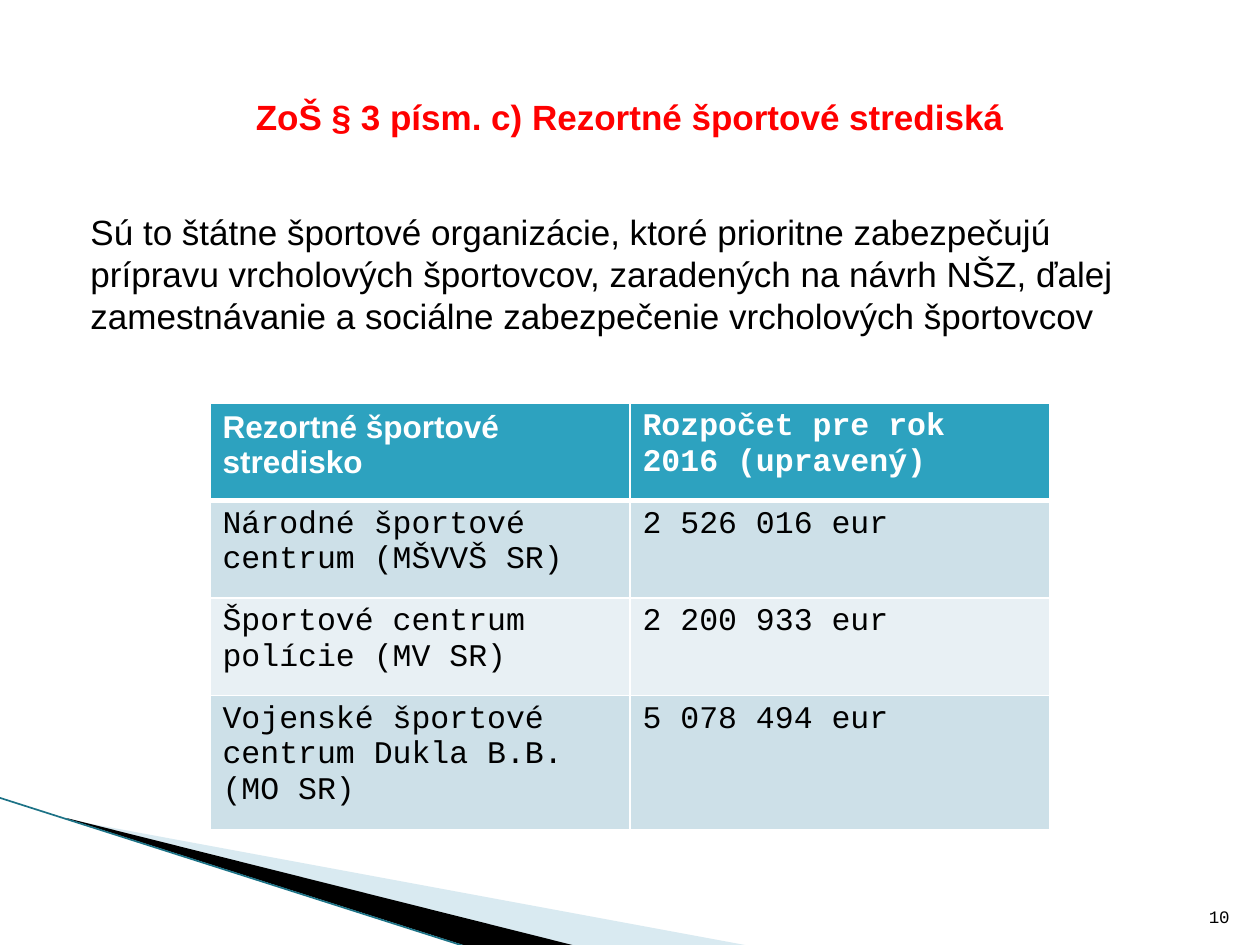
from pptx import Presentation
from pptx.dml.color import RGBColor
from pptx.enum.shapes import MSO_CONNECTOR
from pptx.enum.text import MSO_ANCHOR, PP_ALIGN
from pptx.oxml.ns import qn
from pptx.util import Pt
from lxml.etree import SubElement

WHITE = RGBColor(0xFF, 0xFF, 0xFF)
BLACK = RGBColor(0x00, 0x00, 0x00)
RED = RGBColor(0xFF, 0x00, 0x00)
HEADER_TEAL = RGBColor(0x2D, 0xA2, 0xBF)
BAND_DARK = RGBColor(0xCD, 0xE0, 0xE8)
BAND_LIGHT = RGBColor(0xE8, 0xF0, 0xF4)
WEDGE_BLUE = RGBColor(0xA0, 0xCB, 0xDC)
EDGE_TEAL = RGBColor(0x1C, 0x72, 0x86)

SANS = "Arial"
MONO = "Courier New"

ROW_HEIGHTS = (55.7, 55.7, 55.7, 76.5)
COLUMN_WIDTH = 240
TABLE_ROWS = (
    ("Rezortné športové stredisko", "Rozpočet pre rok 2016 (upravený)"),
    ("Národné športové centrum (MŠVVŠ SR)", "2 526 016 eur"),
    ("Športové centrum polície (MV SR)", "2 200 933 eur"),
    ("Vojenské športové centrum Dukla B.B.\n(MO SR)", "5 078 494 eur"),
)


def add_run(paragraph, text, font_name, size, color, bold=False):
    run = paragraph.add_run()
    run.text = text
    run.font.name = font_name
    run.font.size = Pt(size)
    run.font.bold = bold
    run.font.color.rgb = color


def add_text(slide, box, text, font_name, size, color, bold=False,
             align=PP_ALIGN.LEFT, anchor=MSO_ANCHOR.TOP, indent=0):
    shape = slide.shapes.add_textbox(*map(Pt, box))
    frame = shape.text_frame
    frame.word_wrap = True
    frame.vertical_anchor = anchor
    paragraph = frame.paragraphs[0]
    paragraph.alignment = align
    if indent:
        paragraph._p.get_or_add_pPr().set("marL", str(Pt(indent)))
    add_run(paragraph, text, font_name, size, color, bold)


def add_wedge(slide, points, color, opacity=100):
    start, *others = [(Pt(x), Pt(y)) for x, y in points]
    builder = slide.shapes.build_freeform(*start)
    builder.add_line_segments(others, close=True)
    shape = builder.convert_to_shape()
    shape.shadow.inherit = False
    shape.line.fill.background()
    shape.fill.solid()
    shape.fill.fore_color.rgb = color
    if opacity < 100:
        color_element = shape._element.spPr.find(".//" + qn("a:srgbClr"))
        SubElement(color_element, qn("a:alpha"), val=str(opacity * 1000))


def add_edge_line(slide, start, end, color, width):
    line = slide.shapes.add_connector(
        MSO_CONNECTOR.STRAIGHT, *map(Pt, start + end))
    line.line.color.rgb = color
    line.line.width = Pt(width)
    SubElement(line._element.spPr, qn("a:effectLst"))


def set_borders(cell, bottom_width):
    """Draw white cell borders; they must precede the fill in tcPr."""
    properties = cell._tc.get_or_add_tcPr()
    for side, width in (("L", 1), ("R", 1), ("T", 1), ("B", bottom_width)):
        border = SubElement(properties, qn(f"a:ln{side}"), w=str(Pt(width)))
        fill = SubElement(border, qn("a:solidFill"))
        SubElement(fill, qn("a:srgbClr"), val=str(WHITE))


def fill_cell(cell, text, font_name, is_header, color):
    set_borders(cell, 3 if is_header else 1)
    cell.fill.solid()
    cell.fill.fore_color.rgb = color
    frame = cell.text_frame
    for index, line in enumerate(text.split("\n")):
        paragraph = frame.add_paragraph() if index else frame.paragraphs[0]
        add_run(paragraph, line, font_name, 18,
                WHITE if is_header else BLACK, is_header)


def add_budget_table(slide, left, top):
    table = slide.shapes.add_table(
        len(TABLE_ROWS), 2, Pt(left), Pt(top),
        Pt(2 * COLUMN_WIDTH), Pt(sum(ROW_HEIGHTS))).table
    for column in table.columns:
        column.width = Pt(COLUMN_WIDTH)
    for row_index, texts in enumerate(TABLE_ROWS):
        table.rows[row_index].height = Pt(ROW_HEIGHTS[row_index])
        is_header = row_index == 0
        band = BAND_DARK if row_index % 2 else BAND_LIGHT
        for column_index, text in enumerate(texts):
            font_name = SANS if is_header and column_index == 0 else MONO
            fill_cell(table.cell(row_index, column_index), text, font_name,
                      is_header, HEADER_TEAL if is_header else band)


def main():
    presentation = Presentation()
    presentation.slide_width = Pt(720)
    presentation.slide_height = Pt(540)
    slide = presentation.slides.add_slide(presentation.slide_layouts[6])

    add_wedge(slide, [(39.6, 468.5), (428.4, 540.5), (328.3, 540.5),
                      (39.6, 468)], WEDGE_BLUE, opacity=40)
    add_wedge(slide, [(38.2, 467.5), (329, 540.5), (267.8, 541),
                      (38.9, 468)], BLACK)
    add_edge_line(slide, (-0.5, 455.8), (267, 541.2), EDGE_TEAL, 0.95)

    add_text(slide, (36, 116.6, 648, 356.4),
             "Sú to štátne športové organizácie, ktoré prioritne zabezpečujú "
             "prípravu vrcholových športovcov, zaradených na návrh NŠZ, ďalej "
             "zamestnávanie a sociálne zabezpečenie vrcholových športovcov",
             SANS, 20, BLACK, indent=8.64)
    add_text(slide, (681, 504.7, 28.8, 28.8), "10", MONO, 10, BLACK,
             align=PP_ALIGN.RIGHT, anchor=MSO_ANCHOR.BOTTOM)
    add_text(slide, (36, 21.6, 648, 90),
             "ZoŠ § 3 písm. c) Rezortné športové strediská", SANS, 20, RED,
             bold=True, align=PP_ALIGN.CENTER, anchor=MSO_ANCHOR.MIDDLE)
    add_budget_table(slide, 120, 230.4)

    presentation.save("out.pptx")


if __name__ == "__main__":
    main()
